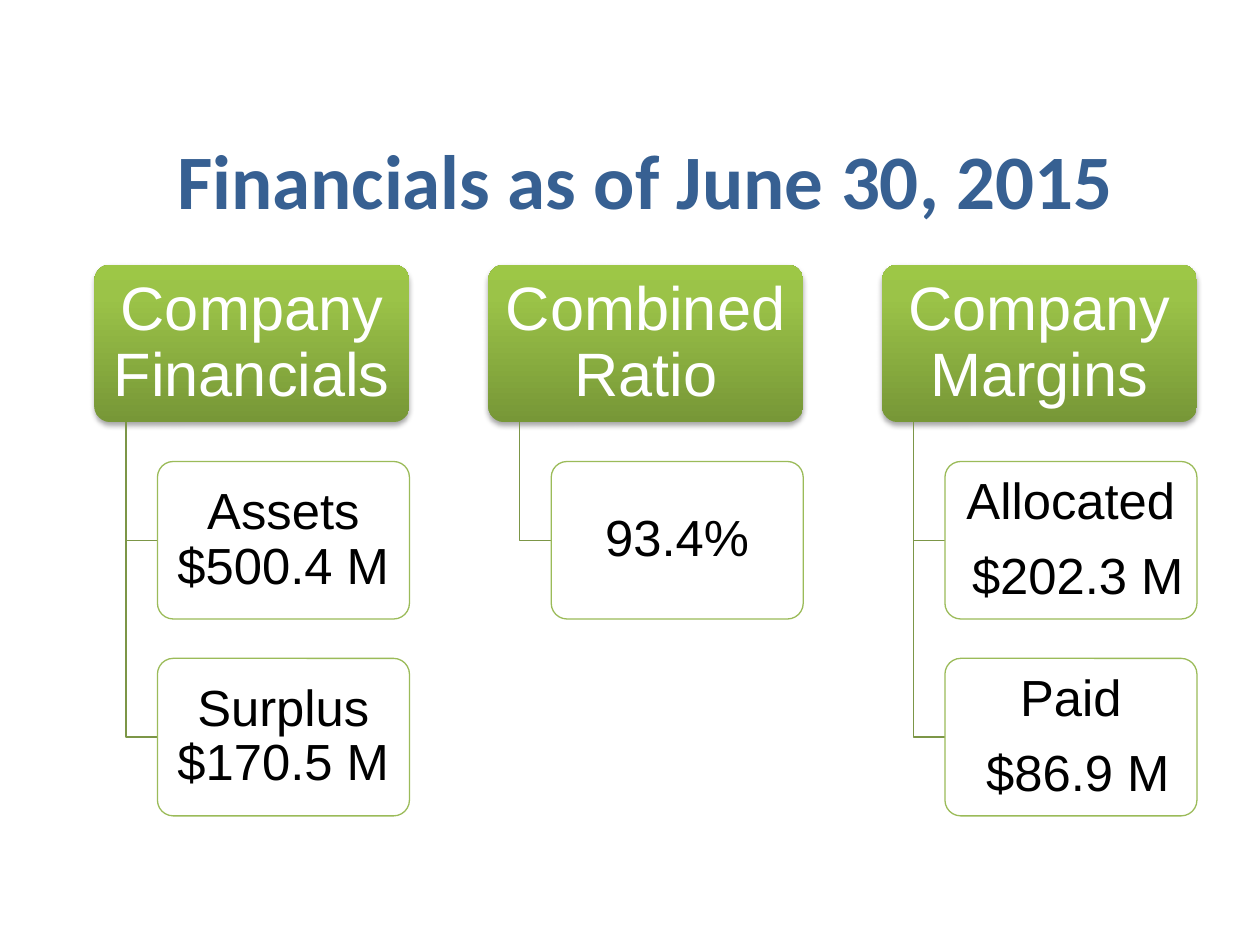
import pptx
import pptx.util
import pptx.dml.color
import pptx.enum.shapes
import pptx.enum.text
import pptx.oxml
import pptx.oxml.ns

Inches = pptx.util.Inches
Pt = pptx.util.Pt
ROUND = pptx.enum.shapes.MSO_SHAPE.ROUNDED_RECTANGLE

HEAD = {"size": Pt(35), "name": "Arial", "color": "FFFFFF"}
ITEM = {"size": Pt(29), "name": "Arial", "color": "000000"}
TITLE = {"size": Pt(44), "name": "Calibri", "color": "376092", "bold": True}

# Each column: heading, then items as lists of paragraphs
COLS = [
    ("Company Financials", [["Assets $500.4 M"], ["Surplus $170.5 M"]]),
    ("Combined Ratio", [["93.4%"]]),
    ("Company Margins", [["Allocated", " $202.3 M"], ["Paid", " $86.9 M"]]),
]
TALL = 1.25     # height of every box
STEP = 1.5625   # from one row to the next
INDENT = 0.25   # from heading edge to stem, and from stem to item


def rgb(code):
    return pptx.dml.color.RGBColor.from_string(code)


def parse(body):
    space = pptx.oxml.ns.nsdecls("a")
    return pptx.oxml.parse_xml(body.replace(">", f" {space}>", 1))


def write(shape, lines, style, pad, **para):
    """Fill a shape with centred paragraphs in one style."""
    frame = shape.text_frame
    frame.word_wrap = True
    frame.vertical_anchor = pptx.enum.text.MSO_ANCHOR.MIDDLE
    across, down = pad
    frame.margin_left = frame.margin_right = Inches(across)
    frame.margin_top = frame.margin_bottom = Inches(down)
    for i, line in enumerate(lines):
        text = frame.add_paragraph() if i else frame.paragraphs[0]
        text.alignment = pptx.enum.text.PP_ALIGN.CENTER
        for key, value in para.items():
            setattr(text, key, value)
        run = text.add_run()
        run.text = line
        for key, value in style.items():
            if key == "color":
                run.font.color.rgb = rgb(value)
            else:
                setattr(run.font, key, value)


def add_card(slide, left, top, wide, lines, style, pad):
    """Add a rounded box with its text."""
    card = slide.shapes.add_shape(
        ROUND, Inches(left), Inches(top), Inches(wide), Inches(TALL))
    card.adjustments[0] = 0.1
    card.shadow.inherit = False
    write(card, lines, style, pad, line_spacing=0.9, space_after=Pt(11.5))
    return card


def add_head(slide, left, top, wide, label):
    """Add a green heading with a gradient and a soft shadow."""
    card = add_card(slide, left, top, wide, [label], HEAD, (0.07, 0.05))
    card.line.fill.background()
    stops = "".join(
        f'<a:gs pos="{at * 1000}"><a:srgbClr val="{code}"/></a:gs>'
        for at, code in [(0, "779737"), (80, "9BC348"), (100, "9DC746")])
    props = card.element.spPr
    props.find(pptx.oxml.ns.qn("a:prstGeom")).addnext(parse(
        f'<a:gradFill><a:gsLst>{stops}</a:gsLst>'
        '<a:lin ang="16200000" scaled="0"/></a:gradFill>'))
    props.find(pptx.oxml.ns.qn("a:effectLst")).append(parse(
        f'<a:outerShdw blurRad="{Pt(3.1)}" dist="{Pt(1.8)}" dir="5400000" '
        'rotWithShape="0"><a:srgbClr val="000000"><a:alpha val="35000"/>'
        '</a:srgbClr></a:outerShdw>'))


def add_item(slide, left, top, wide, lines):
    """Add an outlined item box, slightly see-through."""
    card = add_card(slide, left, top, wide, lines, ITEM, (0.06, 0.04))
    card.fill.solid()
    card.fill.fore_color.rgb = rgb("FFFFFF")
    color = card.element.spPr.find(".//" + pptx.oxml.ns.qn("a:srgbClr"))
    color.append(parse('<a:alpha val="90000"></a:alpha>'))
    card.line.color.rgb = rgb("9BBB59")
    card.line.width = Pt(0.75)


def add_stem(slide, left, top, wide, tall):
    """Add the elbow line from a heading down to an item."""
    x, y = Inches(left), Inches(top)
    end = Inches(top + tall)
    path = slide.shapes.build_freeform(x, y)
    path.add_line_segments([(x, end), (Inches(left + wide), end)], close=False)
    stem = path.convert_to_shape()
    stem.shadow.inherit = False
    stem.fill.background()
    stem.line.color.rgb = rgb("7C9647")
    stem.line.width = Pt(0.75)


def add_column(slide, left, top, wide, label, items):
    """Add one heading with its items hanging below."""
    add_head(slide, left, top, wide, label)
    base = top + TALL
    for row, lines in enumerate(items, 1):
        y = top + row * STEP
        add_stem(slide, left + INDENT, base, INDENT, y + TALL / 2 - base)
        add_item(slide, left + 2 * INDENT, y, wide - 2 * INDENT, lines)


def add_title(slide, left, top, wide, tall):
    box = slide.shapes.add_textbox(
        Inches(left), Inches(top), Inches(wide), Inches(tall))
    write(box, ["Financials as of June 30, 2015"], TITLE, (0.1, 0.05))


def main():
    deck = pptx.Presentation()
    deck.slide_width, deck.slide_height = Inches(10), Inches(7.5)
    slide = deck.slides.add_slide(deck.slide_layouts[6])
    # Three equal columns, then the title above them
    for i, (label, items) in enumerate(COLS):
        add_column(slide, 0.75 + i * 3.125, 2.1, 2.5, label, items)
    add_title(slide, 0.5, 0.92, 9.25, 1)
    deck.save("out.pptx")


if __name__ == "__main__":
    main()
